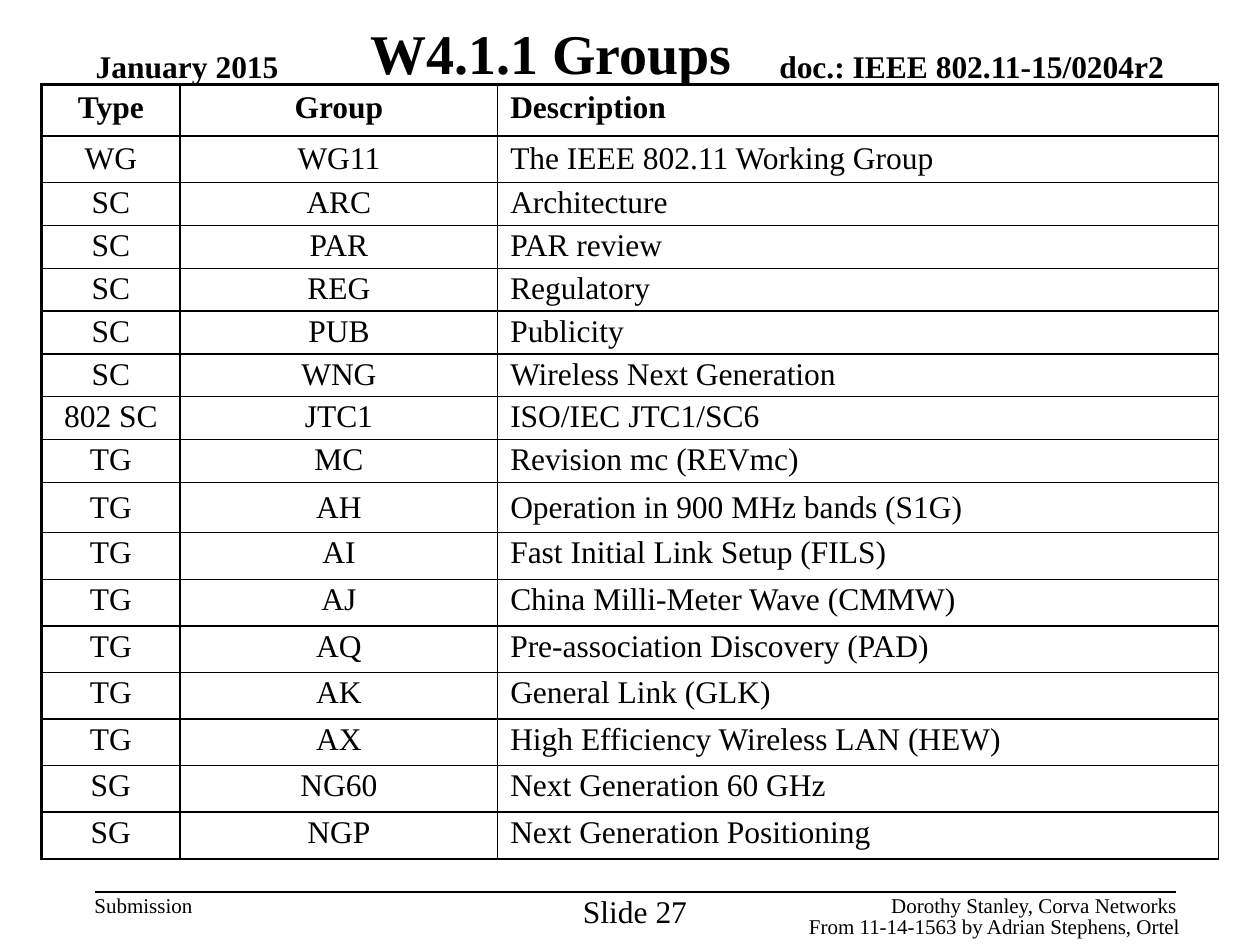
from dataclasses import dataclass

from lxml import etree
from pptx import Presentation
from pptx.dml.color import RGBColor
from pptx.enum.shapes import MSO_CONNECTOR
from pptx.enum.text import MSO_ANCHOR, MSO_AUTO_SIZE, PP_ALIGN
from pptx.oxml.ns import qn
from pptx.util import Inches, Pt

LEFT, CENTER, RIGHT = PP_ALIGN.LEFT, PP_ALIGN.CENTER, PP_ALIGN.RIGHT
JUSTIFY = PP_ALIGN.JUSTIFY
TOP, MIDDLE, BOTTOM = MSO_ANCHOR.TOP, MSO_ANCHOR.MIDDLE, MSO_ANCHOR.BOTTOM
STRAIGHT = MSO_CONNECTOR.STRAIGHT

FONT = "Times New Roman"
COLORS = {"ink": "000000"}
THIN, THICK = 1, 2.25


@dataclass
class Label:
    text: str
    left: float
    top: float
    width: float
    height: float
    size: int = 12
    bold: bool = False
    align: PP_ALIGN = LEFT
    anchor: MSO_ANCHOR = TOP
    wrap: bool = False


@dataclass
class Group:
    kind: str
    name: str
    description: str
    height: float = 0.37
    margin: float = 1.8  # points above and below the text
    spacing: int = 10  # percent before the paragraph
    anchor: MSO_ANCHOR = TOP
    bold: bool = False


LABELS = [
    Label("doc.: IEEE 802.11-15/0204r2", 5.65, 0.37, 3.59, 0.3, 18, True, RIGHT, BOTTOM),
    Label("January 2015", 0.76, 0.37, 1.99, 0.3, 18, True, LEFT, BOTTOM, True),
    Label("Submission", 0.75, 7.08, 0.9, 0.2),
    Label("Slide 27", 4.54, 7.08, 1, 0.3, 18, align=CENTER),
    Label("Dorothy Stanley, Corva Networks", 6.84, 7.08, 2.5, 0.2, align=RIGHT),
    Label("From 11-14-1563 by Adrian Stephens, Ortel", 6.42, 7.25, 3.2, 0.2, align=JUSTIFY),
]

SHORT = 0.34
COLUMN_WIDTHS = [1.1, 2.52, 5.72]
GROUPS = [
    Group("Type", "Group", "Description", 0.41, 3.25, 20, bold=True),
    Group("WG", "WG11", "The IEEE 802.11 Working Group", 0.37, 3.25, 20),
    Group("SC", "ARC", "Architecture", SHORT),
    Group("SC", "PAR", "PAR review", SHORT),
    Group("SC", "REG", "Regulatory", SHORT),
    Group("SC", "PUB", "Publicity", SHORT),
    Group("SC", "WNG", "Wireless Next Generation", SHORT),
    Group("802 SC", "JTC1", "ISO/IEC JTC1/SC6", SHORT),
    Group("TG", "MC", "Revision mc (REVmc)", SHORT),
    Group("TG", "AH", "Operation in 900 MHz bands (S1G)", 0.4, anchor=MIDDLE),
    Group("TG", "AI", "Fast Initial Link Setup (FILS)"),
    Group("TG", "AJ", "China Milli-Meter Wave (CMMW)"),
    Group("TG", "AQ", "Pre-association Discovery (PAD)"),
    Group("TG", "AK", "General Link (GLK)"),
    Group("TG", "AX", "High Efficiency Wireless LAN (HEW)"),
    Group("SG", "NG60", "Next Generation 60 GHz"),
    Group("SG", "NGP", "Next Generation Positioning"),
]


def write(frame, text: str, size: int, bold: bool, align: PP_ALIGN):
    frame.text = text
    para = frame.paragraphs[0]
    para.alignment = align
    font = para.runs[0].font
    font.name, font.size, font.bold = FONT, Pt(size), bold
    font.color.rgb = RGBColor.from_string(COLORS["ink"])
    return para


def add_label(slide, label: Label) -> None:
    box = slide.shapes.add_textbox(
        *map(Inches, (label.left, label.top, label.width, label.height)))
    frame = box.text_frame
    frame.margin_left = frame.margin_right = frame.margin_top = frame.margin_bottom = 0
    frame.word_wrap = label.wrap
    frame.auto_size = MSO_AUTO_SIZE.SHAPE_TO_FIT_TEXT
    frame.vertical_anchor = label.anchor
    write(frame, label.text, label.size, label.bold, label.align)


def add_rule(slide, left: float, right: float, top: float) -> None:
    rule = slide.shapes.add_connector(
        STRAIGHT, Inches(left), Inches(top), Inches(right), Inches(top))
    rule.line.color.rgb = RGBColor.from_string(COLORS["ink"])
    rule.line.width = Pt(THIN)
    etree.SubElement(rule.element.spPr, qn("a:effectLst"))


def set_borders(cell, widths: dict[str, float]) -> None:
    properties = cell._tc.get_or_add_tcPr()
    for side, width in widths.items():
        line = etree.SubElement(properties, qn(f"a:ln{side}"), w=str(Pt(width)))
        fill = etree.SubElement(line, qn("a:solidFill"))
        etree.SubElement(fill, qn("a:srgbClr"), val=COLORS["ink"])


def set_percent_before(para, percent: int) -> None:
    before = etree.SubElement(para._p.get_or_add_pPr(), qn("a:spcBef"))
    etree.SubElement(before, qn("a:spcPct"), val=str(percent * 1000))


def add_group_table(slide, left: float, top: float) -> None:
    table = slide.shapes.add_table(
        len(GROUPS), len(COLUMN_WIDTHS), Inches(left), Inches(top),
        Inches(sum(COLUMN_WIDTHS)), Inches(sum(group.height for group in GROUPS))).table
    table.first_row = table.horz_banding = False
    for column, width in zip(table.columns, COLUMN_WIDTHS):
        column.width = Inches(width)
    for row_index, group in enumerate(GROUPS):
        table.rows[row_index].height = Inches(group.height)
        texts = (group.kind, group.name, group.description)
        for column_index, text in enumerate(texts):
            cell = table.cell(row_index, column_index)
            cell.margin_top = cell.margin_bottom = Pt(group.margin)
            cell.vertical_anchor = group.anchor
            align = LEFT if column_index == 2 else CENTER
            para = write(cell.text_frame, text, 18, group.bold, align)
            set_percent_before(para, group.spacing)
            set_borders(cell, {
                "L": THIN if column_index else THICK, "R": THIN,
                "T": THIN if row_index else THICK, "B": THIN})
            cell.fill.background()


def main() -> None:
    deck = Presentation()
    deck.slide_width, deck.slide_height = Inches(10), Inches(7.5)
    slide = deck.slides.add_slide(deck.slide_layouts[5])

    # Header and footer rules
    add_rule(slide, 0.75, 9.25, 0.67)
    add_rule(slide, 0.75, 9.33, 7.08)

    # Title
    title = slide.shapes.title
    title.left, title.top = Inches(0.5), Inches(0.16)
    title.width, title.height = Inches(7.75), Inches(0.5)
    title.text_frame.auto_size = MSO_AUTO_SIZE.NONE
    title.text_frame.vertical_anchor = MIDDLE
    write(title.text_frame, "W4.1.1 Groups", 32, True, CENTER)

    # Table of groups
    add_group_table(slide, 0.33, 0.67)

    # Header and footer texts
    for label in LABELS:
        add_label(slide, label)

    deck.save("out.pptx")


if __name__ == "__main__":
    main()
